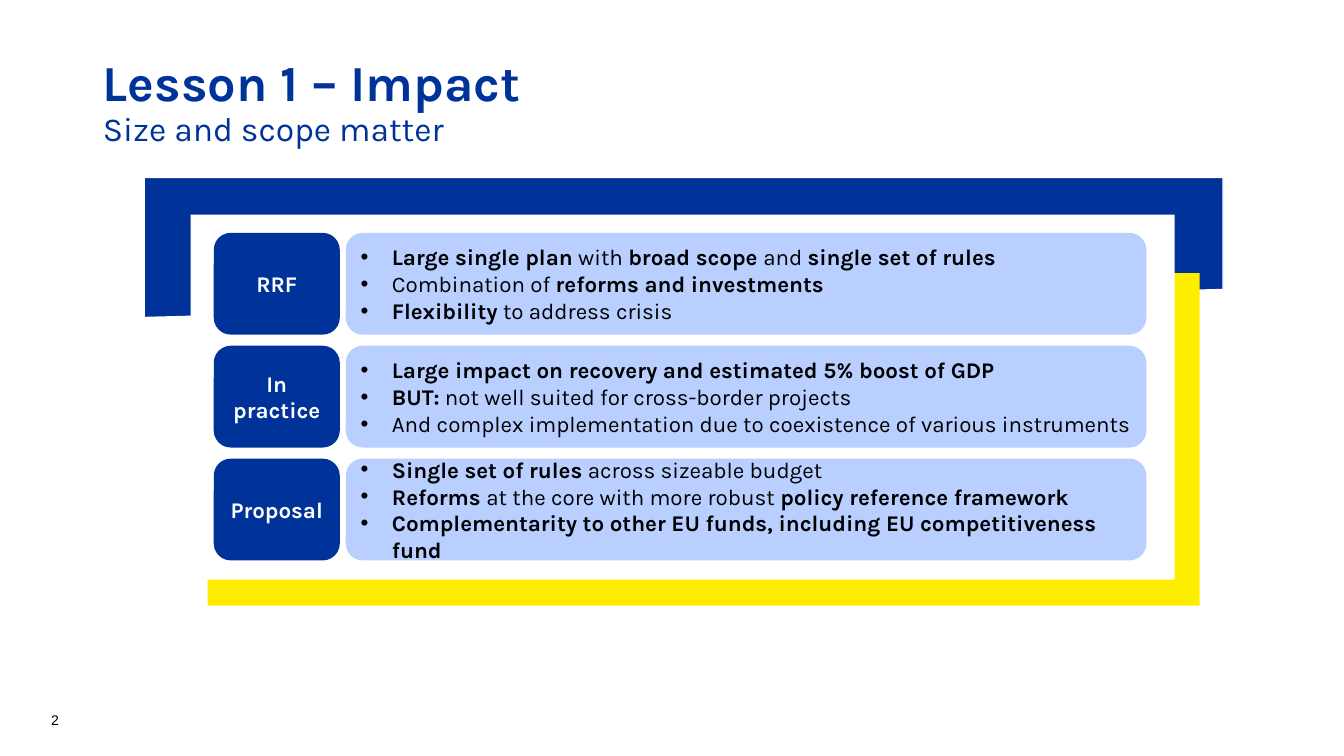
from dataclasses import dataclass

from lxml.etree import SubElement
from pptx import Presentation
from pptx.dml.color import RGBColor
from pptx.enum.shapes import MSO_SHAPE
from pptx.enum.text import MSO_ANCHOR, MSO_AUTO_SIZE, PP_ALIGN
from pptx.oxml.ns import qn
from pptx.util import Inches, Pt


@dataclass(frozen=True)
class Theme:
    blue: str = "003399"
    pale_blue: str = "B8CFFF"
    yellow: str = "FFED00"
    white: str = "FFFFFF"
    black: str = "000000"
    font: str = "Karla"
    number_font: str = "Arial"
    title_size: int = 36
    subtitle_size: int = 24
    body_size: int = 16
    number_size: int = 10


class SlideBuilder:
    def __init__(self, slide, theme):
        self.slide = slide
        self.theme = theme

    def apply(self, target, values):
        for name, value in values.items():
            setattr(target, name, value)

    def run(self, paragraph, text, size, color, bold=False, font=None):
        run = paragraph.add_run()
        run.text = text
        self.apply(run.font, {"name": font or self.theme.font, "size": Pt(size), "bold": bold})
        run.font.color.rgb = RGBColor.from_string(color)

    def title(self, box, heading, subtitle):
        theme = self.theme
        shape = self.slide.shapes.title
        self.apply(shape, dict(zip(("left", "top", "width", "height"), map(Inches, box))))
        frame = shape.text_frame
        self.apply(frame, {"word_wrap": True, "auto_size": MSO_AUTO_SIZE.NONE,
                           "vertical_anchor": MSO_ANCHOR.MIDDLE})
        paragraph = frame.paragraphs[0]
        self.apply(paragraph, {"alignment": PP_ALIGN.LEFT, "line_spacing": 0.9})
        self.run(paragraph, heading, theme.title_size, theme.blue, bold=True)
        paragraph.add_line_break()
        self.run(paragraph, subtitle, theme.subtitle_size, theme.blue)

    def block(self, kind, box, fill, line=None, rotation=0):
        shape = self.slide.shapes.add_shape(kind, *map(Inches, box))
        shape.shadow.inherit = False
        shape.rotation = rotation
        shape.fill.solid()
        shape.fill.fore_color.rgb = RGBColor.from_string(fill)
        if line:
            shape.line.color.rgb = RGBColor.from_string(line)
            shape.line.width = Pt(1)
        else:
            shape.line.fill.background()
        self.apply(shape.text_frame, {"word_wrap": True, "vertical_anchor": MSO_ANCHOR.MIDDLE})
        return shape

    def label(self, box, text):
        shape = self.block(MSO_SHAPE.ROUNDED_RECTANGLE, box, self.theme.blue)
        paragraph = shape.text_frame.paragraphs[0]
        paragraph.alignment = PP_ALIGN.CENTER
        self.run(paragraph, text, self.theme.body_size, self.theme.white, bold=True)

    def bullet(self, paragraph):
        properties = paragraph._p.get_or_add_pPr()
        properties.set("marL", str(Inches(0.31)))
        properties.set("indent", str(Inches(-0.31)))
        color = SubElement(properties, qn("a:buClr"))
        SubElement(color, qn("a:srgbClr"), val=self.theme.black)
        SubElement(properties, qn("a:buFont"), typeface=self.theme.number_font)
        SubElement(properties, qn("a:buChar"), char="•")

    def panel(self, box, points):
        shape = self.block(MSO_SHAPE.ROUNDED_RECTANGLE, box, self.theme.pale_blue)
        frame = shape.text_frame
        for index, point in enumerate(points):
            paragraph = frame.add_paragraph() if index else frame.paragraphs[0]
            self.bullet(paragraph)
            paragraph.alignment = PP_ALIGN.LEFT
            for part, text in enumerate(point.split("**")):
                if text:
                    self.run(paragraph, text, self.theme.body_size, self.theme.black,
                             bold=part % 2 == 1)

    def page_number(self, box, text):
        frame = self.slide.shapes.add_textbox(*map(Inches, box)).text_frame
        self.apply(frame, {"word_wrap": True, "vertical_anchor": MSO_ANCHOR.BOTTOM})
        self.run(frame.paragraphs[0], text, self.theme.number_size, self.theme.black,
                 font=self.theme.number_font)


LESSONS = [
    ("RRF", [
        "**Large single plan** with **broad scope **and **single set of rules**",
        "Combination of **reforms and investments**",
        "**Flexibility** to address crisis",
    ]),
    ("In practice", [
        "**Large impact on recovery and estimated 5% boost of GDP**",
        "**BUT:** not well suited for cross-border projects",
        "And complex implementation due to coexistence of various instruments",
    ]),
    ("Proposal", [
        "**Single set of rules** across sizeable budget",
        "**Reforms **at the core with more robust **policy reference framework**",
        "**Complementarity to other EU funds, including EU competitiveness fund**",
    ]),
]
FIRST_ROW_TOP = 2.31
ROW_PITCH = 1.12
ROW_HEIGHT = 1.01


def main():
    presentation = Presentation()
    presentation.slide_width = Inches(13.33)
    presentation.slide_height = Inches(7.5)
    theme = Theme()
    builder = SlideBuilder(presentation.slides.add_slide(presentation.slide_layouts[5]), theme)

    builder.title((0.92, 0.58, 11.9, 0.89), "Lesson 1 – Impact", "Size and scope matter")
    builder.page_number((0.41, 6.87, 3, 0.4), "2")

    builder.block(MSO_SHAPE.FLOWCHART_MANUAL_INPUT, (1.43, 1.76, 10.7, 1.39), theme.blue,
                  line=theme.white, rotation=180)
    builder.block(MSO_SHAPE.RECTANGLE, (2.06, 2.71, 9.84, 3.3), theme.yellow)
    builder.block(MSO_SHAPE.RECTANGLE, (1.89, 2.13, 9.76, 3.62), theme.white)

    for row, (name, points) in enumerate(LESSONS):
        top = FIRST_ROW_TOP + row * ROW_PITCH
        builder.panel((3.43, top, 7.94, ROW_HEIGHT), points)
        builder.label((2.12, top, 1.25, ROW_HEIGHT), name)

    presentation.save("out.pptx")


if __name__ == "__main__":
    main()
